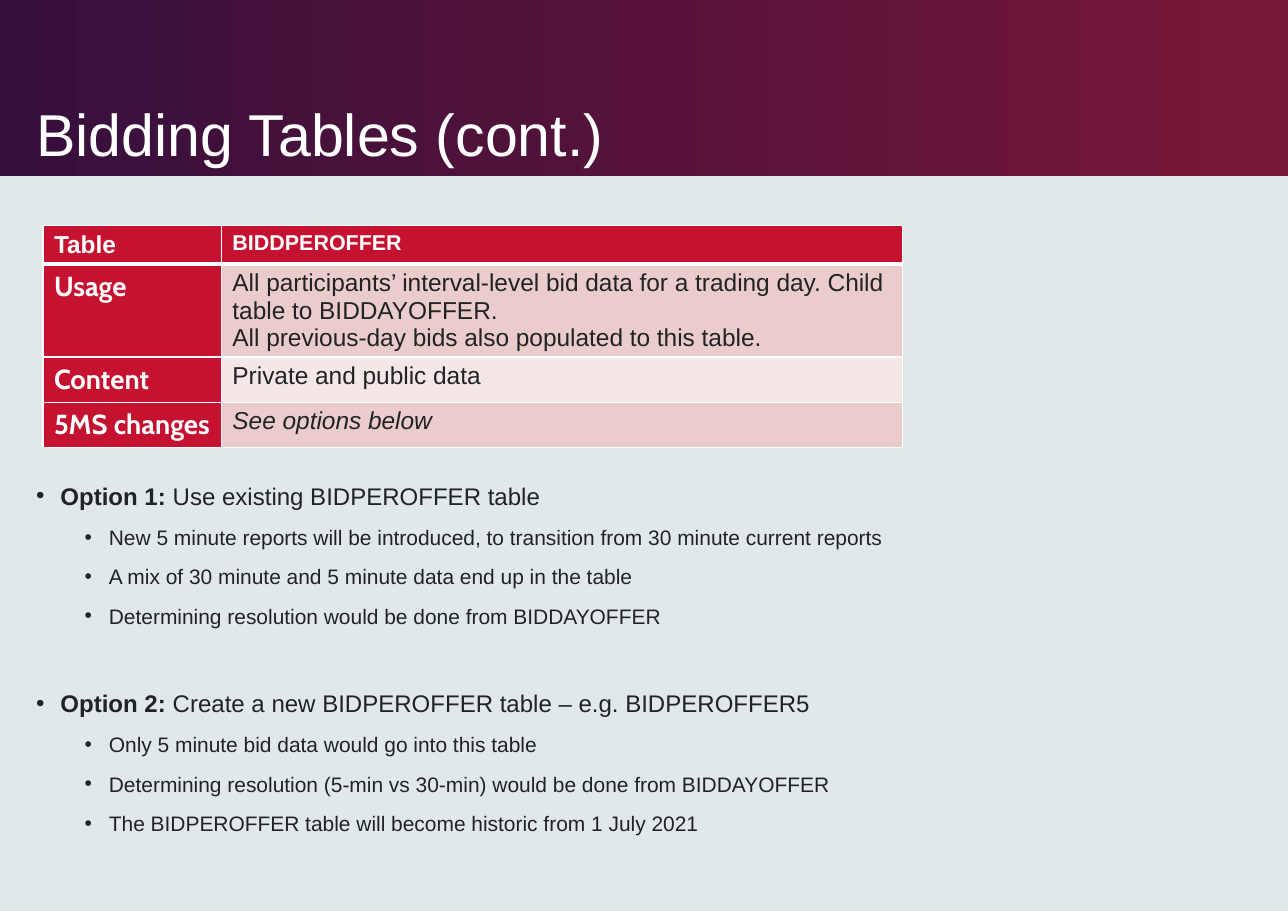
from lxml.etree import SubElement
from pptx import Presentation
from pptx.dml.color import RGBColor
from pptx.enum.shapes import MSO_SHAPE
from pptx.enum.text import MSO_ANCHOR, MSO_AUTO_SIZE, PP_ALIGN
from pptx.oxml.ns import qn
from pptx.util import Inches, Pt

WHITE = RGBColor(0xFF, 0xFF, 0xFF)
INK = RGBColor(0x22, 0x23, 0x24)
PALE = RGBColor(0xE0, 0xE8, 0xEA)
PURPLE = RGBColor(0x36, 0x0F, 0x3C)
MAROON = RGBColor(0x77, 0x17, 0x38)
RED = RGBColor(0xC4, 0x12, 0x30)
ROSE = RGBColor(0xEA, 0xCC, 0xCD)
BLUSH = RGBColor(0xF5, 0xE7, 0xE8)


def add_span(para, text, size, color, bold=False, italic=False, font="Arial"):
    span = para.add_run()
    span.text = text
    span.font.name = font
    span.font.size = Pt(size)
    span.font.color.rgb = color
    span.font.bold = bold
    span.font.italic = italic


def add_border(cell, side, width):
    line = SubElement(cell._tc.get_or_add_tcPr(), qn(f"a:ln{side}"), w=str(Pt(width)))
    fill = SubElement(line, qn("a:solidFill"))
    SubElement(fill, qn("a:srgbClr"), val=str(WHITE))


deck = Presentation()
deck.slide_width = Inches(11.69)
deck.slide_height = Inches(8.27)
page = deck.slides.add_slide(deck.slide_layouts[5])
page.background.fill.solid()
page.background.fill.fore_color.rgb = PALE

header = page.shapes.add_shape(MSO_SHAPE.RECTANGLE, 0, 0, deck.slide_width, Inches(1.6))
header.shadow.inherit = False
header.line.fill.background()
header.fill.gradient()
header.fill.gradient_angle = 0
for stop, color, position in zip(header.fill.gradient_stops, (PURPLE, MAROON), (0, 0.99)):
    stop.color.rgb = color
    stop.position = position

title = page.shapes.title
title.element.addprevious(header.element)
title.left, title.top = Inches(0.23), Inches(0.16)
title.width, title.height = Inches(8.63), Inches(1.43)
title.text_frame.auto_size = MSO_AUTO_SIZE.NONE
title.text_frame.vertical_anchor = MSO_ANCHOR.BOTTOM
para = title.text_frame.paragraphs[0]
para.alignment = PP_ALIGN.LEFT
para.line_spacing = 0.9
add_span(para, "Bidding Tables (cont.)", 38.6, WHITE)

rows = [
    ("Table", ["BIDDPEROFFER"], 0.35, RED),
    ("Usage", [
        "All participants’ interval-level bid data for a trading day. Child table to BIDDAYOFFER.",
        "All previous-day bids also populated to this table.",
    ], 0.83, ROSE),
    ("Content", ["Private and public data"], 0.41, BLUSH),
    ("5MS changes", ["See options below"], 0.41, ROSE),
]
table = page.shapes.add_table(
    len(rows), 2, Inches(0.39), Inches(2.05), Inches(7.8), Inches(2)
).table
table.columns[0].width = Inches(1.62)
table.columns[1].width = Inches(6.18)
for index, (label, lines, height, tint) in enumerate(rows):
    is_header = index == 0
    table.rows[index].height = Inches(height)
    label_cell, detail_cell = table.cell(index, 0), table.cell(index, 1)
    for cell, color in ((label_cell, RED), (detail_cell, tint)):
        for side in "LRTB":
            thick = (is_header and side == "B") or (index == 1 and side == "T")
            add_border(cell, side, 3 if thick else 1)
        cell.fill.solid()
        cell.fill.fore_color.rgb = color
    add_span(label_cell.text_frame.paragraphs[0], label, 16 if is_header else 18, WHITE,
             bold=True, font="Arial" if is_header else "Cabin")
    for number, line in enumerate(lines):
        frame = detail_cell.text_frame
        para = frame.add_paragraph() if number else frame.paragraphs[0]
        add_span(para, line, 14 if is_header else 16, WHITE if is_header else INK,
                 bold=is_header, italic=label == "5MS changes")

options = [
    ("Option 1: ", "Use existing BIDPEROFFER table", 8.8, [
        "New 5 minute reports will be introduced, to transition from 30 minute current reports",
        "A mix of 30 minute and 5 minute data end up in the table",
        "Determining resolution would be done from BIDDAYOFFER",
    ]),
    ("Option 2: ", "Create a new BIDPEROFFER table – e.g. BIDPEROFFER5", 33.8, [
        "Only 5 minute bid data would go into this table",
        "Determining resolution (5-min vs 30-min) would be done from BIDDAYOFFER",
        "The BIDPEROFFER table will become historic from 1 July 2021",
    ]),
]
box = page.shapes.add_textbox(Inches(0.23), Inches(4.24), Inches(11.22), Inches(3.61))
frame = box.text_frame
frame.word_wrap = True
para = frame.paragraphs[0]
for name, summary, gap, points in options:
    if para.runs:
        para = frame.add_paragraph()
    para.space_before = Pt(gap)
    add_span(para, name, 15.7, INK, bold=True)
    add_span(para, summary, 15.7, INK)
    for point in points:
        para = frame.add_paragraph()
        para.level = 1
        para.space_before = Pt(4.4)
        add_span(para, point, 13.7, INK)
for para in frame.paragraphs:
    para.line_spacing = 1.3
    properties = para._p.get_or_add_pPr()
    properties.set("marL", str(Inches(0.66 if para.level else 0.22)))
    properties.set("indent", str(Inches(-0.22)))
    SubElement(properties, qn("a:buFont"), typeface="Arial")
    SubElement(properties, qn("a:buChar"), char="•")

deck.save("out.pptx")
